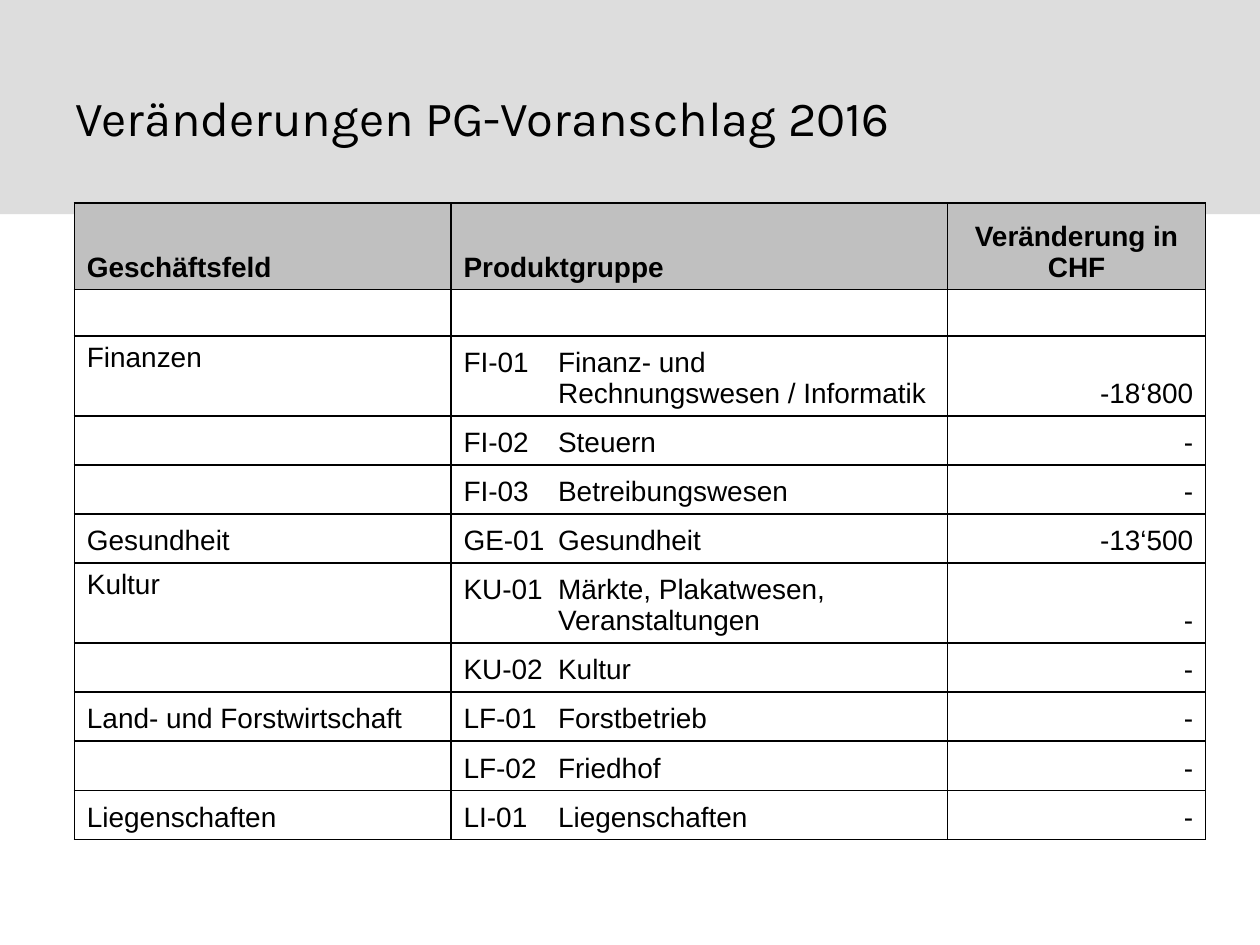
from lxml import etree
from pptx import Presentation
from pptx.dml.color import RGBColor
from pptx.enum import shapes, text
from pptx.oxml import ns
from pptx.util import Inches, Pt

BLACK, HEADER_GRAY, BAND_GRAY = "000000", "C0C0C0", "DDDDDD"
CODE_WIDTH = Inches(0.75)
LEFT, CENTER, RIGHT = text.PP_ALIGN.LEFT, text.PP_ALIGN.CENTER, text.PP_ALIGN.RIGHT
TOP, MIDDLE, BOTTOM = (text.MSO_ANCHOR.TOP, text.MSO_ANCHOR.MIDDLE,
                       text.MSO_ANCHOR.BOTTOM)

COLUMN_WIDTHS = [2.99, 3.94, 2.05]
HEADINGS = ["Geschäftsfeld", "Produktgruppe", "Veränderung in CHF"]
# Row height, business field, its anchor, product group, change
BUDGET_ROWS = [
    (0.35, "", TOP, "", ""),
    (0.59, "Finanzen", TOP,
     "FI-01\tFinanz- und\vRechnungswesen / Informatik", "-18‘800"),
    (0.39, "", TOP, "FI-02\tSteuern", "-"),
    (0.39, "", TOP, "FI-03\tBetreibungswesen", "-"),
    (0.39, "Gesundheit", BOTTOM, "GE-01\tGesundheit", "-13‘500"),
    (0.63, "Kultur", TOP, "KU-01\tMärkte, Plakatwesen,\vVeranstaltungen", "-"),
    (0.39, "", TOP, "KU-02\tKultur", "-"),
    (0.39, "Land- und Forstwirtschaft", BOTTOM, "LF-01\tForstbetrieb", "-"),
    (0.39, "", TOP, "LF-02\tFriedhof", "-"),
    (0.39, "Liegenschaften", BOTTOM, "LI-01\tLiegenschaften", "-"),
]


def color(value):
    return RGBColor.from_string(value)


def add_element(parent, tag, **attributes):
    element = etree.SubElement(parent, ns.qn(tag))
    for key, value in attributes.items():
        element.set(key, str(value))
    return element


def write(frame, words, size=16, face="Arial", bold=False, align=LEFT, hanging=False):
    frame.word_wrap = True
    paragraph = frame.paragraphs[0]
    paragraph.text = words
    paragraph.alignment = align
    if hanging:
        properties = paragraph._p.get_or_add_pPr()
        properties.set("marL", str(CODE_WIDTH))
        properties.set("indent", str(-CODE_WIDTH))
        tabs = add_element(properties, "a:tabLst")
        add_element(tabs, "a:tab", pos=CODE_WIDTH, algn="l")
    for run in paragraph.runs:
        run.font.size = Pt(size)
        run.font.name = face
        run.font.bold = bold
        run.font.color.rgb = color(BLACK)
    if not words:
        # Keeps the height of an empty cell at the table's text size
        add_element(paragraph._p, "a:endParaRPr", sz=size * 100)


def set_cell(cell, words, anchor=BOTTOM, fill=None, **style):
    write(cell.text_frame, words, **style)
    cell.vertical_anchor = anchor
    properties = cell._tc.get_or_add_tcPr()
    for side in ("a:lnL", "a:lnR", "a:lnT", "a:lnB"):
        line = add_element(properties, side, w=Pt(1))
        add_element(add_element(line, "a:solidFill"), "a:srgbClr", val=BLACK)
    if fill:
        cell.fill.solid()
        cell.fill.fore_color.rgb = color(fill)
    else:
        cell.fill.background()


def add_band(slide, left, top, width, height):
    band = slide.shapes.add_shape(shapes.MSO_SHAPE.RECTANGLE, left, top, width, height)
    band.shadow.inherit = False
    band.fill.solid()
    band.fill.fore_color.rgb = color(BAND_GRAY)
    band.line.fill.background()


def add_title(slide, left, top, width, height):
    title = slide.shapes.add_textbox(left, top, width, height)
    title.text_frame.vertical_anchor = MIDDLE
    write(title.text_frame, "Veränderungen PG-Voranschlag 2016", size=28, face="Karla")


def add_budget_table(slide, left, top, width, height):
    budget = slide.shapes.add_table(
        len(BUDGET_ROWS) + 1, len(HEADINGS), left, top, width, height).table
    budget.horz_banding = False
    for column, column_width in zip(budget.columns, COLUMN_WIDTHS):
        column.width = Inches(column_width)

    # Header row
    budget.rows[0].height = Inches(0.69)
    for index, (heading, align) in enumerate(zip(HEADINGS, (LEFT, LEFT, CENTER))):
        set_cell(budget.cell(0, index), heading, fill=HEADER_GRAY, bold=True, align=align)

    # Product groups
    for index, (row_height, field, anchor, group, change) in enumerate(BUDGET_ROWS, 1):
        budget.rows[index].height = Inches(row_height)
        set_cell(budget.cell(index, 0), field, anchor)
        set_cell(budget.cell(index, 1), group, hanging=True)
        set_cell(budget.cell(index, 2), change, align=RIGHT)


def main():
    deck = Presentation()
    deck.slide_width, deck.slide_height = Inches(10), Inches(7.5)
    slide = deck.slides.add_slide(deck.slide_layouts[6])
    add_band(slide, 0, 0, deck.slide_width, Inches(1.7))
    add_title(slide, Inches(0.5), Inches(0.3), Inches(9), Inches(1.25))
    add_budget_table(slide, Inches(0.59), Inches(1.61), Inches(8.98), Inches(4.99))
    deck.save("out.pptx")


if __name__ == "__main__":
    main()
